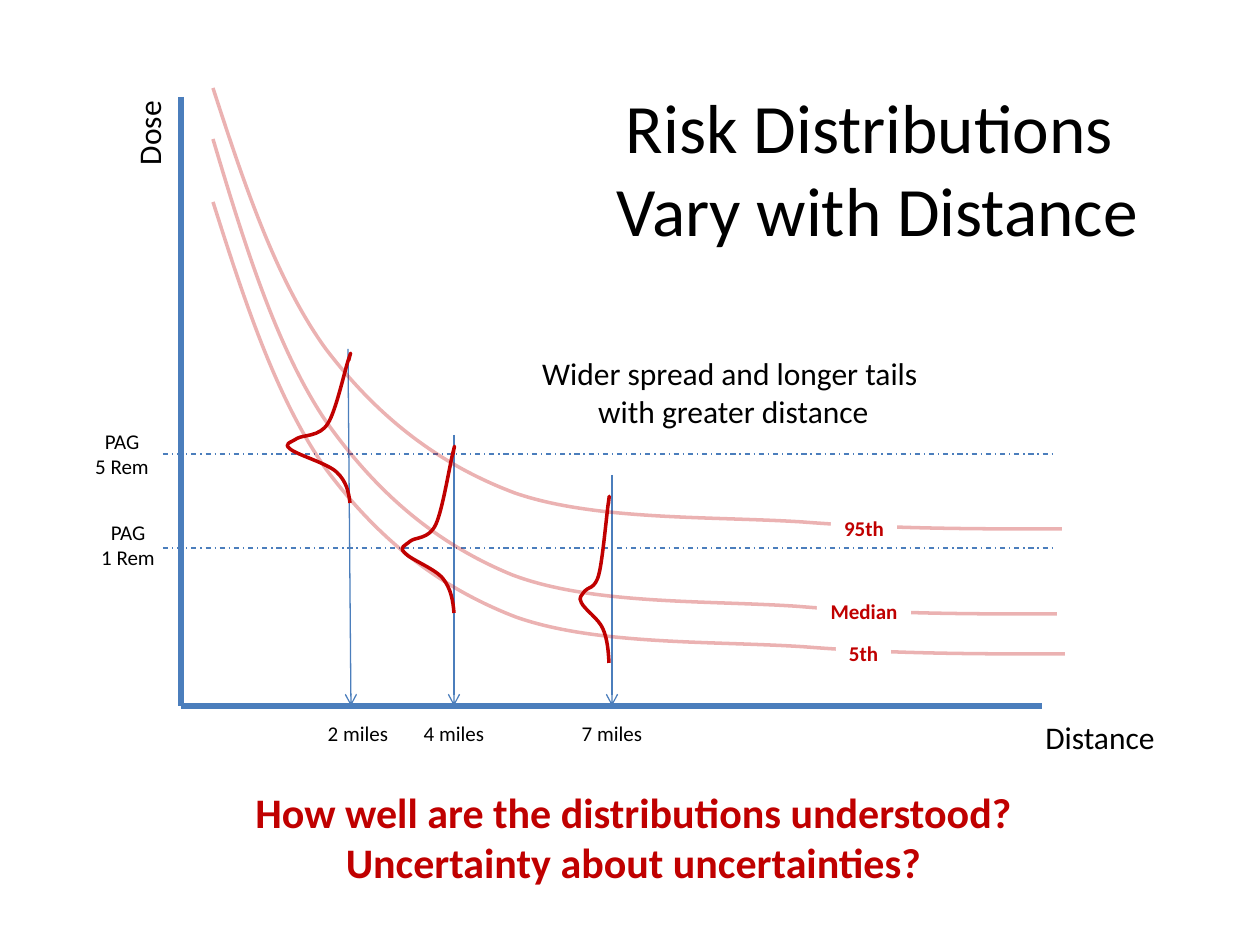
from lxml import etree
from pptx import Presentation
from pptx import util as u
from pptx.dml.color import RGBColor
from pptx.enum import dml, shapes, text
from pptx.oxml.ns import qn

PX = 914400 // 126
BLUE = RGBColor(0x4B, 0x7E, 0xBC)
RED = RGBColor(0xC0, 0x00, 0x00)
BLACK = RGBColor(0x00, 0x00, 0x00)
WHITE = RGBColor(0xFF, 0xFF, 0xFF)

prs = Presentation()
prs.slide_width, prs.slide_height = u.Inches(10), u.Inches(7.5)
s = prs.slides.add_slide(prs.slide_layouts[6])


def add_text(lines, x, y, w, h, size=12, color=BLACK, bold=False, fill=None,
             rotation=0, anchor=text.MSO_ANCHOR.TOP):
    sp = s.shapes.add_textbox(x * PX, y * PX, w * PX, h * PX)
    sp.rotation = rotation
    if fill is not None:
        sp.fill.solid()
        sp.fill.fore_color.rgb = fill
    tf = sp.text_frame
    tf.word_wrap = False
    tf.vertical_anchor = anchor
    for i, line in enumerate(lines.split("\n")):
        p = tf.paragraphs[0] if i == 0 else tf.add_paragraph()
        p.alignment = text.PP_ALIGN.CENTER
        r = p.add_run()
        r.text = line
        r.font.name, r.font.size, r.font.bold = "Calibri", u.Pt(size), bold
        r.font.color.rgb = color


def add_curve(points, x, y, w, h, alpha=None):
    """Draw cubic segments; points are thousandths of the box."""
    pts = [((x + w * a / 1000) * PX, (y + h * b / 1000) * PX) for a, b in points]
    builder = s.shapes.build_freeform(*pts[0])
    builder.add_line_segments(pts[1:], close=False)
    sp = builder.convert_to_shape()
    sp.shadow.inherit = False
    sp.fill.background()
    sp.line.color.rgb = RED
    sp.line.width = u.Pt(2)
    # Each three straight steps become one cubic segment
    steps = list(sp._element.iter(qn("a:lnTo")))
    for i in range(0, len(steps), 3):
        cubic = etree.Element(qn("a:cubicBezTo"))
        steps[i].addprevious(cubic)
        for step in steps[i:i + 3]:
            cubic.append(step[0])
            step.getparent().remove(step)
    if alpha:
        clr = next(sp.line._ln.iter(qn("a:srgbClr")))
        etree.SubElement(clr, qn("a:alpha")).set("val", str(alpha * 1000))


# Axes, guideline levels and distance arrows: ends, width, dashed, arrow
for x1, y1, x2, y2, width, dashed, arrow in [
    (181, 97, 181, 706, 3, False, False),
    (181, 706, 1042, 706, 3, False, False),
    (163, 454, 1054, 454, 0.75, True, False),
    (163, 548, 1054, 548, 0.75, True, False),
    (348, 349, 351, 706, 0.75, False, True),
    (454, 435, 454, 706, 0.75, False, True),
    (612, 475, 612, 706, 0.75, False, True),
]:
    line = s.shapes.add_connector(shapes.MSO_CONNECTOR.STRAIGHT,
                                  x1 * PX, y1 * PX, x2 * PX, y2 * PX)
    line.line.color.rgb = BLUE
    line.line.width = u.Pt(width)
    if dashed:
        line.line.dash_style = dml.MSO_LINE.DASH_DOT
    if arrow:
        etree.SubElement(line.line._ln, qn("a:tailEnd")).set("type", "arrow")
    etree.SubElement(line._element.spPr, qn("a:effectLst"))

# Percentile curves: one decay shape in three boxes
DECAY = [(0, 0), (37, 220), (75, 438), (133, 592), (193, 743), (263, 851),
         (355, 918), (449, 981), (585, 971), (693, 984), (800, 1000),
         (900, 1000), (1000, 1000)]
for box in [(213, 139, 844, 475), (213, 88, 849, 441), (213, 202, 852, 452)]:
    add_curve(DECAY, *box, alpha=30)

# Percentile labels
for label, x, y, w in [("Median", 817, 592, 94), ("95th", 831, 509, 66),
                       ("5th", 836, 634, 55)]:
    add_text(label, x, y, w, 38, color=RED, bold=True, fill=WHITE)

# Dose distributions: one skewed bell in three boxes
BELL = [(1000, 1000), (980, 924), (940, 855), (790, 795), (640, 735), (160, 680),
        (50, 640), (-60, 605), (50, 600), (160, 570), (260, 545), (520, 560),
        (650, 470), (780, 385), (920, 110), (980, 40), (1040, -35), (1000, 10),
        (980, 50)]
for box in [(287, 353, 63, 150), (402, 446, 52, 167), (580, 496, 29, 167)]:
    add_curve(BELL, *box)

# Axis titles and tick labels
add_text("Distance", 1032, 712, 136, 50, size=18)
add_text("Dose", 103, 108, 91, 50, size=18, rotation=270)
add_text("PAG\n5 Rem", 82, 422, 80, 64)
add_text("PAG\n1 Rem", 88, 513, 80, 64)
for label, x in [("2 miles", 314), ("4 miles", 410), ("7 miles", 568)]:
    add_text(label, x, 714, 88, 38)

# Title, remark and closing question
add_text("Risk Distributions \nVary with Distance", 594, 88, 567, 158, size=39.6,
         anchor=text.MSO_ANCHOR.MIDDLE)
add_text("Wider spread and longer tails\n with greater distance",
         527, 348, 406, 89, size=18)
add_text("How well are the distributions understood?\nUncertainty about uncertainties?",
         239, 780, 789, 115, size=24, color=RED, bold=True)

prs.save("out.pptx")
